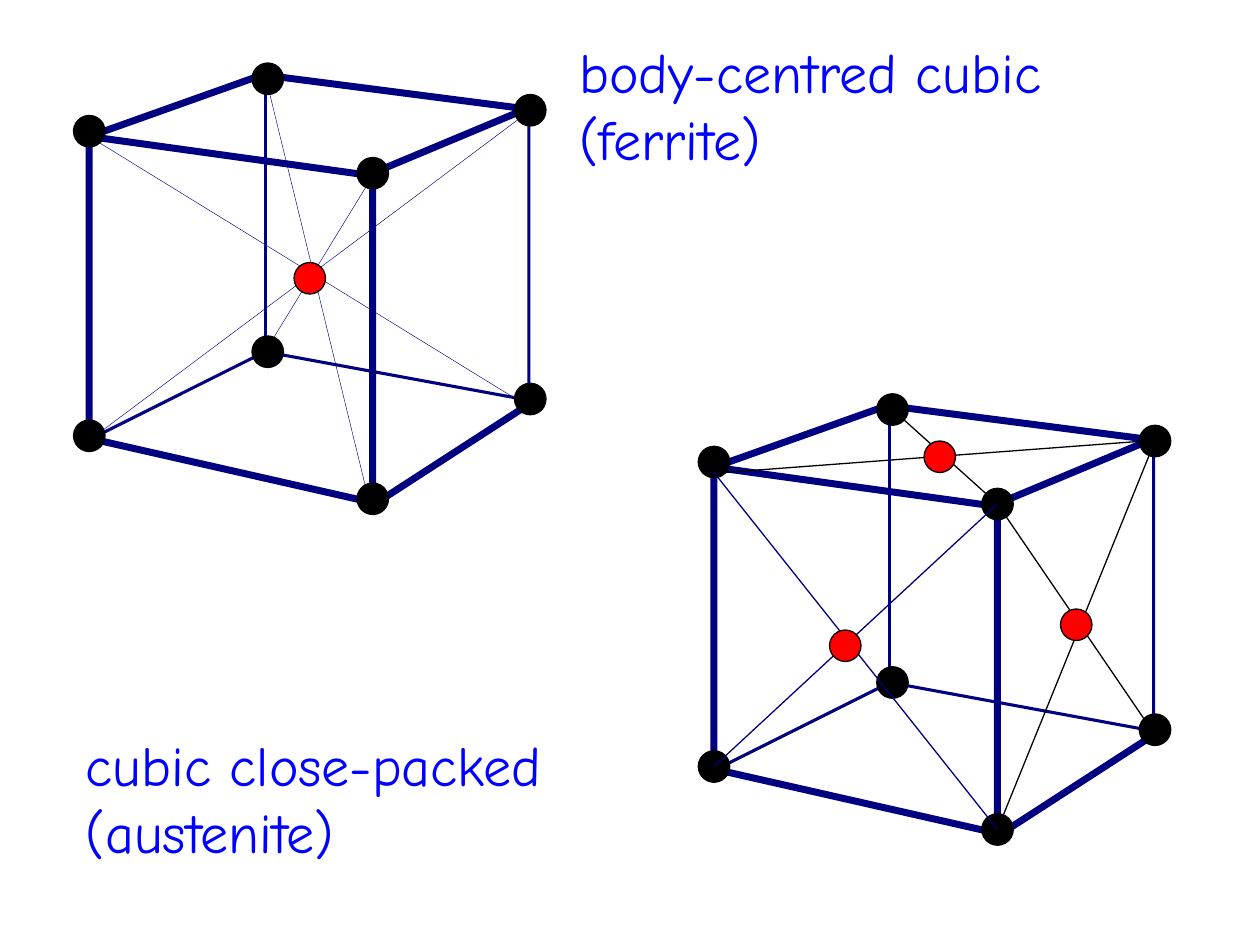
import pptx
import pptx.util
import pptx.dml.color
import pptx.enum.shapes
import pptx.oxml.ns
import lxml.etree

THEME = {
    "edge": "000080", "atom": "000000", "centre": "FF0000", "label": "0000FF",
    "font": "Comic Neue", "label_size": 32,
    "front": 4, "back": 1.75, "body_diagonal": 0.25, "face_diagonal": 0.75,
    "outline": 0.75,
}

COLUMNS, ROWS = 240, 180
WIDTH, HEIGHT = pptx.util.Inches(10), pptx.util.Inches(7.5)
ATOM = 6

CORNERS = [(101, 76), (71, 95), (17, 83), (51, 67),
           (71, 33), (101, 21), (51, 15), (17, 25)]
FRONT_FACE = [(17, 26), (17, 83.5), (71, 95.75), (71, 33.5)]
TOP_RIM = [(17, 26), (50, 14.25), (100.25, 20.75), (69.75, 33.5)]
BACK_RIM = [(17.5, 83.5), (50.5, 67), (100.75, 76.25), (100.75, 20.75)]
BACK_EDGE = [(50.5, 67), (50.5, 14.25)]
SIDE_EDGE = [(71, 96.25), (100.75, 77)]

FERRITE = {
    "origin": (0, 0),
    "diagonals": [
        ((17, 26), (100.75, 77.5), "edge"),
        ((17.5, 83.5), (100.75, 21.25), "edge"),
        ((50.5, 14.25), (70.25, 95.25), "edge"),
        ((50.5, 67), (71, 33.5), "edge"),
    ],
    "weight": "body_diagonal",
    "centres": [(59, 53)],
    "corners_on_top": True,
}
AUSTENITE = {
    "origin": (119, 63),
    "diagonals": [
        ((17, 27), (71, 95), "edge"),
        ((71, 33), (17, 83), "edge"),
        ((71, 33), (101, 77), "atom"),
        ((101, 21), (71, 95), "atom"),
        ((99, 21), (19, 27), "atom"),
        ((51, 15), (71, 33), "atom"),
    ],
    "weight": "face_diagonal",
    "centres": [(42, 60), (86, 56), (60, 24)],
    "corners_on_top": False,
}
LABELS = [
    ("body-centred cubic (ferrite)", (108, 6, 102, 28)),
    ("cubic close-packed (austenite)", (14, 138, 108, 28)),
]


def across(columns):
    return round(WIDTH * columns / COLUMNS)


def down(rows):
    return round(HEIGHT * rows / ROWS)


def place(point, origin):
    return across(point[0] + origin[0]), down(point[1] + origin[1])


def colour(name):
    return pptx.dml.color.RGBColor.from_string(THEME[name])


def set_line(line, ink, weight):
    line.color.rgb = colour(ink)
    line.width = pptx.util.Pt(THEME[weight])


def draw_line(slide, start, end, origin, ink, weight):
    connector = slide.shapes.add_connector(
        pptx.enum.shapes.MSO_CONNECTOR.STRAIGHT,
        *place(start, origin), *place(end, origin))
    set_line(connector.line, ink, weight)
    lxml.etree.SubElement(connector._element.spPr, pptx.oxml.ns.qn("a:effectLst"))


def draw_outline(slide, points, origin, weight, close=False):
    first, *rest = [place(point, origin) for point in points]
    builder = slide.shapes.build_freeform(*first)
    builder.add_line_segments(rest, close=close)
    outline = builder.convert_to_shape()
    outline.shadow.inherit = False
    outline.fill.background()
    set_line(outline.line, "edge", weight)


def draw_atoms(slide, centres, origin, fill):
    for x, y in centres:
        corner = place((x - ATOM / 2, y - ATOM / 2), origin)
        atom = slide.shapes.add_shape(
            pptx.enum.shapes.MSO_SHAPE.OVAL, *corner, across(ATOM), down(ATOM))
        atom.shadow.inherit = False
        atom.fill.solid()
        atom.fill.fore_color.rgb = colour(fill)
        set_line(atom.line, "atom", "outline")


def draw_cell(slide, cell):
    origin = cell["origin"]
    draw_outline(slide, FRONT_FACE, origin, "front", close=True)
    draw_outline(slide, TOP_RIM, origin, "front")
    draw_outline(slide, BACK_RIM, origin, "back")
    draw_line(slide, *BACK_EDGE, origin, "edge", "back")
    draw_line(slide, *SIDE_EDGE, origin, "edge", "front")
    if not cell["corners_on_top"]:
        draw_atoms(slide, CORNERS, origin, "atom")
    for start, end, ink in cell["diagonals"]:
        draw_line(slide, start, end, origin, ink, cell["weight"])
    draw_atoms(slide, cell["centres"], origin, "centre")
    if cell["corners_on_top"]:
        draw_atoms(slide, CORNERS, origin, "atom")


def draw_label(slide, wording, area):
    left, top, columns, rows = area
    label = slide.shapes.add_textbox(
        across(left), down(top), across(columns), down(rows))
    label.text_frame.word_wrap = True
    run = label.text_frame.paragraphs[0].add_run()
    run.text = wording
    run.font.name = THEME["font"]
    run.font.size = pptx.util.Pt(THEME["label_size"])
    run.font.color.rgb = colour("label")


def main():
    deck = pptx.Presentation()
    deck.slide_width, deck.slide_height = WIDTH, HEIGHT
    slide = deck.slides.add_slide(deck.slide_layouts[6])
    for cell in (FERRITE, AUSTENITE):
        draw_cell(slide, cell)
    for wording, area in LABELS:
        draw_label(slide, wording, area)
    deck.save("out.pptx")


if __name__ == "__main__":
    main()
